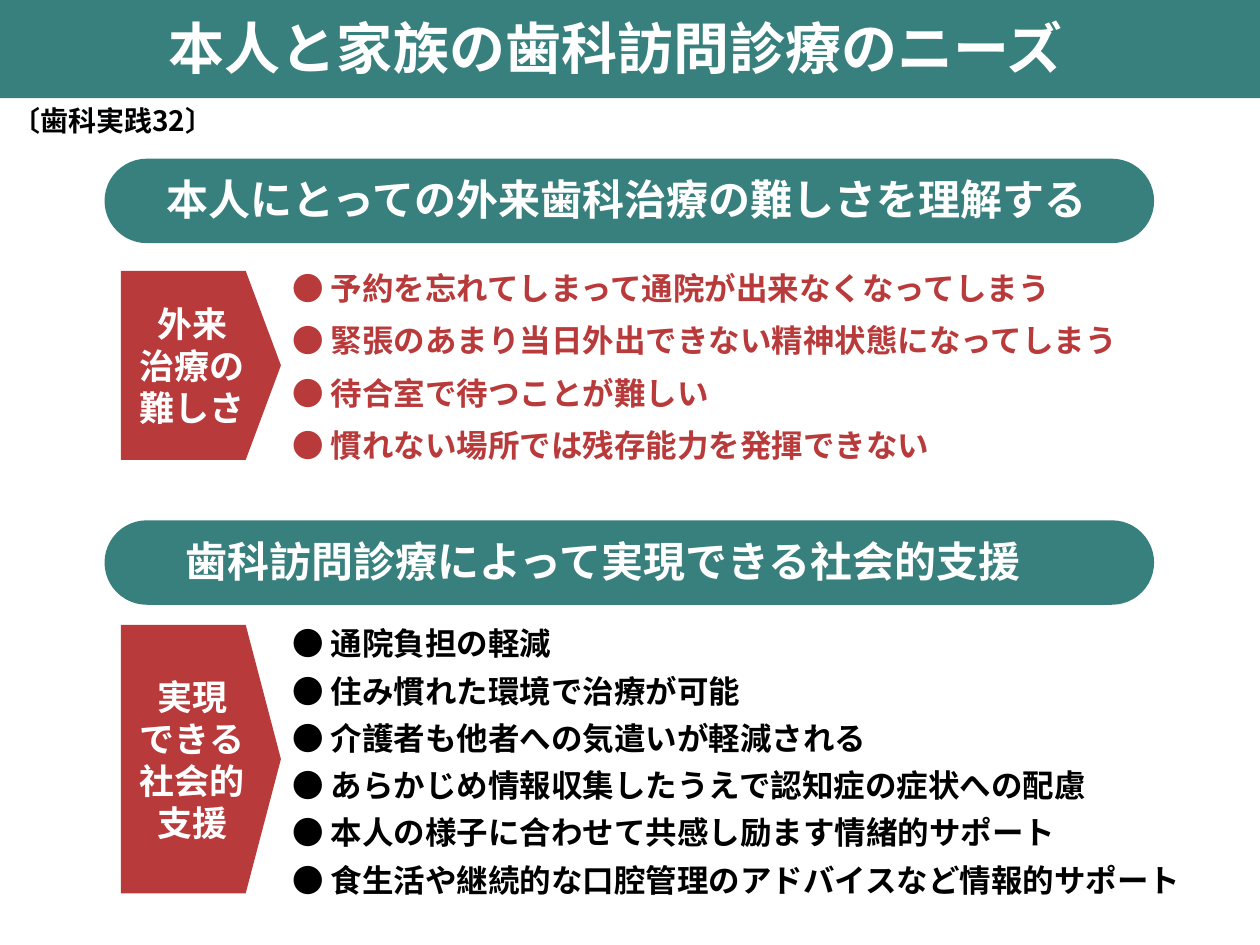
import pptx
import pptx.util
import pptx.dml.color
import pptx.enum.shapes
import pptx.enum.text
import pptx.oxml.ns
import lxml.etree

Inches = pptx.util.Inches
Pt = pptx.util.Pt
KIND = pptx.enum.shapes.MSO_SHAPE
ALIGN = pptx.enum.text.PP_ALIGN
ANCHOR = pptx.enum.text.MSO_ANCHOR
FONT = "Noto Sans CJK JP"
HUES = {"teal": "38807D", "red": "B83A3A", "white": "FFFFFF", "black": "000000"}


def tint(name):
    """Return the colour that a name stands for."""
    return pptx.dml.color.RGBColor.from_string(HUES[name])


def write(frame, text, size=18, hue="white", align=ALIGN.LEFT, lead=None,
          anchor=ANCHOR.TOP, wrap=True):
    """Fill a text frame with one paragraph for each line of text."""
    frame.word_wrap = wrap
    frame.vertical_anchor = anchor
    for num, line in enumerate(text.split("\n")):
        para = frame.add_paragraph() if num else frame.paragraphs[0]
        para.alignment = align
        if lead:
            para.line_spacing = Pt(lead)
        run = para.add_run()
        run.text = line
        font = run.font
        font.name, font.size, font.bold = FONT, Pt(size), True
        font.color.rgb = tint(hue)
        east = lxml.etree.SubElement(run._r.get_or_add_rPr(), pptx.oxml.ns.qn("a:ea"))
        east.set("typeface", FONT)


class Deck:
    """Hold the style and the current slide."""

    def __init__(self):
        """Open a deck with one blank slide."""
        self.file = pptx.Presentation()
        self.file.slide_width = Inches(10)
        self.file.slide_height = Inches(7.5)
        self.slide = self.file.slides.add_slide(self.file.slide_layouts[6])

    def shape(self, kind, box, hue, bend=None):
        """Add a plain filled shape."""
        item = self.slide.shapes.add_shape(kind, *map(Inches, box))
        item.shadow.inherit = False
        item.fill.solid()
        item.fill.fore_color.rgb = tint(hue)
        item.line.fill.background()
        if bend is not None:
            item.adjustments[0] = bend
        return item

    def label(self, box, text, **style):
        """Add a text box."""
        item = self.slide.shapes.add_textbox(*map(Inches, box))
        write(item.text_frame, text, **style)

    def pill(self, top, left, width, text):
        """Add a section heading on a rounded bar."""
        self.shape(KIND.ROUNDED_RECTANGLE, (0.83, top, 8.33, 0.67), "teal", 0.5)
        self.label((left, top + 0.07, width, 0.5), text, size=24)

    def arrow(self, top, height, text):
        """Add a red pointer with centred text."""
        item = self.shape(KIND.PENTAGON, (0.96, top, 1.27, height), "red", 0.22)
        write(item.text_frame, text, size=20, align=ALIGN.CENTER,
              anchor=ANCHOR.MIDDLE, wrap=False)

    def points(self, box, lines, hue, lead):
        """Add a list of dotted points."""
        text = "\n".join("● " + line for line in lines)
        self.label(box, text, hue=hue, lead=lead, anchor=ANCHOR.MIDDLE)


def main():
    """Build the slide and save it."""
    deck = Deck()
    deck.shape(KIND.RECTANGLE, (0, 0, 10, 0.78), "teal")
    deck.label((0.39, 0.06, 9, 0.6), "本人と家族の歯科訪問診療のニーズ",
               size=32, align=ALIGN.CENTER)
    deck.points((2.22, 1.94, 7.27, 1.82), [
        "予約を忘れてしまって通院が出来なくなってしまう",
        "緊張のあまり当日外出できない精神状態になってしまう",
        "待合室で待つことが難しい",
        "慣れない場所では残存能力を発揮できない",
    ], "red", 30)
    deck.pill(1.26, 1.22, 7.52, "本人にとっての外来歯科治療の難しさを理解する")
    deck.pill(4.13, 1.37, 7.21, "歯科訪問診療によって実現できる社会的支援")
    deck.points((2.22, 4.86, 7.88, 2.29), [
        "通院負担の軽減",
        "住み慣れた環境で治療が可能",
        "介護者も他者への気遣いが軽減される",
        "あらかじめ情報収集したうえで認知症の症状への配慮",
        "本人の様子に合わせて共感し励ます情緒的サポート",
        "食生活や継続的な口腔管理のアドバイスなど情報的サポート",
    ], "black", 27)
    deck.label((0, 0.77, 1.79, 0.37), "〔歯科実践32〕", size=16,
               hue="black", align=ALIGN.CENTER)
    deck.arrow(2.15, 1.5, "外来\n治療の\n難しさ")
    deck.arrow(4.96, 2.13, "実現\nできる\n社会的\n支援")
    deck.file.save("out.pptx")


if __name__ == "__main__":
    main()
